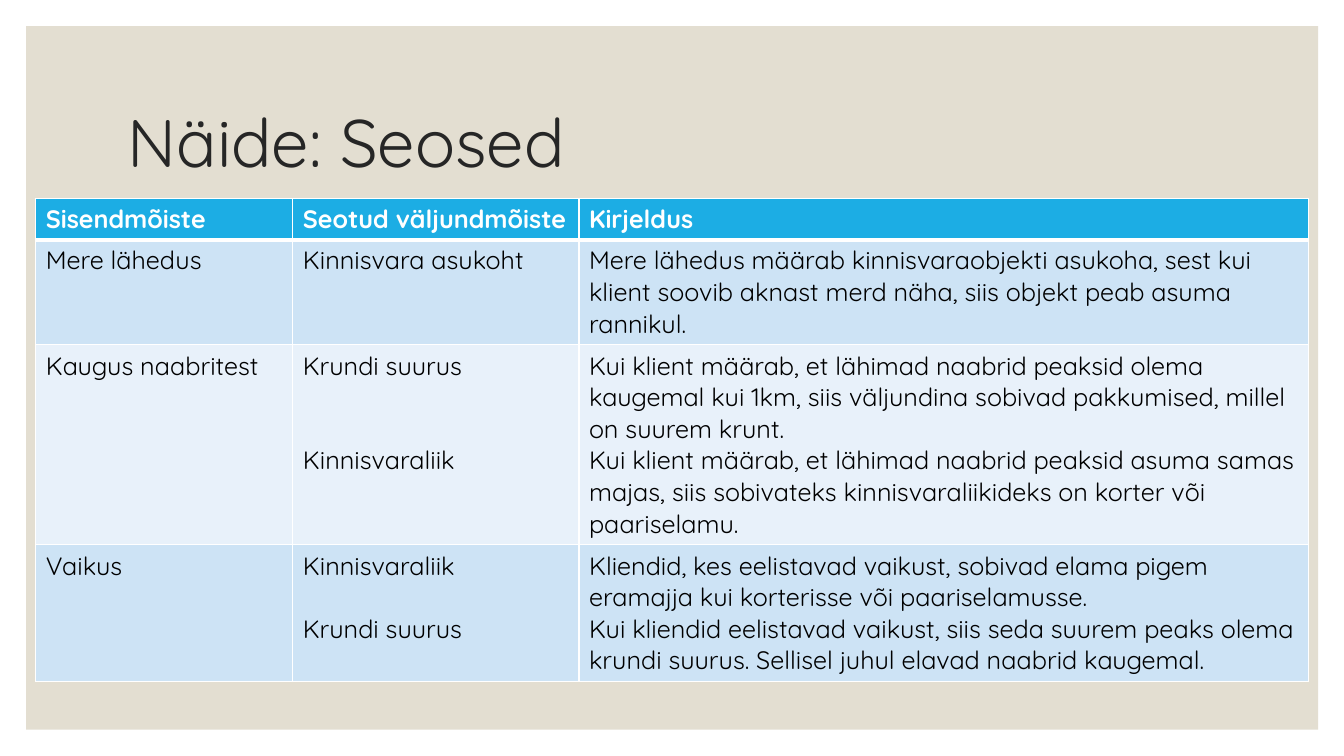
from lxml import etree
from pptx import Presentation
from pptx.dml.color import RGBColor
from pptx.enum.shapes import MSO_SHAPE as Shape
from pptx.enum.text import MSO_ANCHOR as Anchor
from pptx.oxml.ns import qn
from pptx.util import Cm, Pt

FONT = "Quicksand"
LINE_PITCH = 22.5
HEADER_FILL = "1CADE4"
BAND_FILLS = ["CDE3F5", "E8F1FA"]
COLUMN_WIDTHS = [6.48, 7.21, 18.39]
ROW_HEIGHTS = [1.04, 2.65, 5.04, 3.45]
HEADINGS = ["Sisendmõiste", "Seotud väljundmõiste", "Kirjeldus"]
RELATIONS = [
    ("Mere lähedus", [
        ("Kinnisvara asukoht", 0,
         "Mere lähedus määrab kinnisvaraobjekti asukoha, sest kui klient "
         "soovib aknast merd näha, siis objekt peab asuma rannikul."),
    ]),
    ("Kaugus naabritest", [
        ("Krundi suurus", 0,
         "Kui klient määrab, et lähimad naabrid peaksid olema kaugemal kui "
         "1km, siis väljundina sobivad pakkumised, millel on suurem krunt."),
        ("Kinnisvaraliik", 2,
         "Kui klient määrab, et lähimad naabrid peaksid asuma samas majas, "
         "siis sobivateks kinnisvaraliikideks on korter või paariselamu."),
    ]),
    ("Vaikus", [
        ("Kinnisvaraliik", 0,
         "Kliendid, kes eelistavad vaikust, sobivad elama pigem eramajja "
         "kui korterisse või paariselamusse."),
        ("Krundi suurus", 1,
         "Kui kliendid eelistavad vaikust, siis seda suurem peaks olema "
         "krundi suurus. Sellisel juhul elavad naabrid kaugemal."),
    ]),
]


def color(value):
    """Turn a hex string into a colour."""
    return RGBColor.from_string(value)


def add_run(paragraph, text, size, hex_color, bold=False):
    """Add one formatted run to a paragraph."""
    run = paragraph.add_run()
    run.text = text
    run.font.name = FONT
    run.font.size = Pt(size)
    run.font.bold = bold
    run.font.color.rgb = color(hex_color)


def set_borders(cell, top, bottom):
    """Give a cell white borders, with top and bottom widths in points."""
    properties = cell._tc.get_or_add_tcPr()
    sides = [("a:lnL", 1), ("a:lnR", 1), ("a:lnT", top), ("a:lnB", bottom)]
    for position, (tag, width) in enumerate(sides):
        line = etree.Element(qn(tag), w=str(Pt(width)))
        fill = etree.SubElement(line, qn("a:solidFill"))
        etree.SubElement(fill, qn("a:srgbClr"), val="FFFFFF")
        properties.insert(position, line)


def fill_cell(cell, entries, fill, hex_color, bold=False):
    """Write (text, blank lines before) entries into a filled cell."""
    cell.fill.solid()
    cell.fill.fore_color.rgb = color(fill)
    frame = cell.text_frame
    for index, (text, gap) in enumerate(entries):
        paragraph = frame.add_paragraph() if index else frame.paragraphs[0]
        if gap:
            paragraph.space_before = Pt(gap * LINE_PITCH)
        add_run(paragraph, text, 18, hex_color, bold)


def add_panel(slide, left, top, width, height):
    """Draw the beige panel behind the content."""
    panel = slide.shapes.add_shape(Shape.RECTANGLE, left, top, width, height)
    panel.shadow.inherit = False
    panel.fill.solid()
    panel.fill.fore_color.rgb = color("E3DED1")
    panel.line.fill.background()


def add_title(slide, text, left, top, width, height):
    """Place the slide title, centred vertically in its box."""
    frame = slide.shapes.add_textbox(left, top, width, height).text_frame
    frame.word_wrap = True
    frame.vertical_anchor = Anchor.MIDDLE
    paragraph = frame.paragraphs[0]
    paragraph.line_spacing = 0.9
    add_run(paragraph, text, 48, "262626")


def add_relations_table(slide, left, top):
    """Build the table of input concepts and related output concepts."""
    table = slide.shapes.add_table(
        len(ROW_HEIGHTS), len(COLUMN_WIDTHS), left, top,
        Cm(sum(COLUMN_WIDTHS)), Cm(sum(ROW_HEIGHTS))).table
    for column, width in zip(table.columns, COLUMN_WIDTHS):
        column.width = Cm(width)
    for row, height in zip(table.rows, ROW_HEIGHTS):
        row.height = Cm(height)
    for cell, heading in zip(table.rows[0].cells, HEADINGS):
        fill_cell(cell, [(heading, 0)], HEADER_FILL, "FFFFFF", True)
        set_borders(cell, 1, 3)
    for number, (concept, links) in enumerate(RELATIONS):
        outputs = [(output, gap) for output, gap, _ in links]
        descriptions = [(description, 0) for _, _, description in links]
        contents = [[(concept, 0)], outputs, descriptions]
        for cell, entries in zip(table.rows[number + 1].cells, contents):
            fill_cell(cell, entries, BAND_FILLS[number % 2], "000000")
            set_borders(cell, 1 if number else 3, 1)


def main():
    """Create the presentation and save it."""
    presentation = Presentation()
    presentation.slide_width = Cm(33.87)
    presentation.slide_height = Cm(19.05)
    slide = presentation.slides.add_slide(presentation.slide_layouts[6])
    add_panel(slide, Cm(0.66), Cm(0.66), Cm(32.56), Cm(17.73))
    add_title(slide, "Näide: Seosed", Cm(2.97), Cm(1.78), Cm(27.94), Cm(3.81))
    add_relations_table(slide, Cm(0.9), Cm(5))
    presentation.save("out.pptx")


if __name__ == "__main__":
    main()
